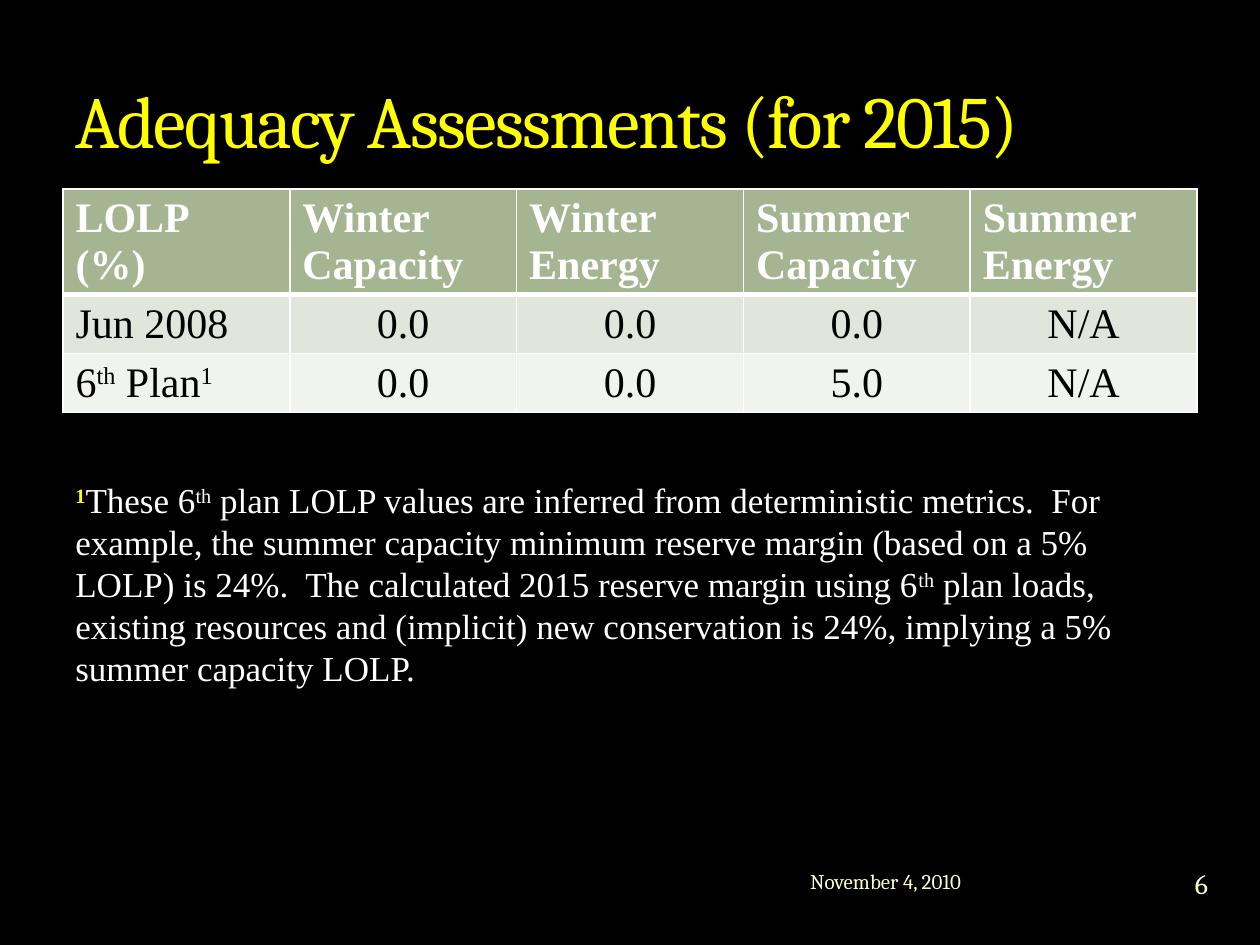
import pptx
import pptx.util
import pptx.dml.color
import pptx.enum.text
import pptx.oxml
import pptx.oxml.ns

Cm = pptx.util.Cm
Pt = pptx.util.Pt
RGB = pptx.dml.color.RGBColor
Align = pptx.enum.text.PP_ALIGN
Anchor = pptx.enum.text.MSO_ANCHOR

BLACK = RGB(0, 0, 0)
WHITE = RGB(255, 255, 255)
YELLOW = RGB(255, 255, 0)
CREAM = RGB(0xFE, 0xFA, 0xC9)
FILLS = [RGB(0xA5, 0xB5, 0x92), RGB(0xE1, 0xE5, 0xDC), RGB(0xF0, 0xF3, 0xEE)]
SERIF = "Times New Roman"
HEAD = "Cambria"

TITLE = "Adequacy Assessments (for 2015)"
DATE = "November 4, 2010"
PAGE = "6"
ROWS = [
    ["LOLP\n(%)", "Winter Capacity", "Winter Energy", "Summer Capacity", "Summer Energy"],
    ["Jun 2008", "0.0", "0.0", "0.0", "N/A"],
    ["6^th^ Plan^1", "0.0", "0.0", "5.0", "N/A"],
]
NOTE = (
    "^1^These 6^th^ plan LOLP values are inferred from deterministic metrics.  "
    "For example, the summer capacity minimum reserve margin (based on a 5% LOLP) "
    "is 24%.  The calculated 2015 reserve margin using 6^th^ plan loads, existing "
    "resources and (implicit) new conservation is 24%, implying a 5% summer "
    "capacity LOLP."
)
LEFT, WIDE = 1.27, 22.86
HIGHS = [2.11, 1.19, 1.19]


def write(frame, text, size, color, face=SERIF, bold=False, align=Align.LEFT):
    for i, line in enumerate(text.split("\n")):
        para = frame.add_paragraph() if i else frame.paragraphs[0]
        para.alignment = align
        font = para.font
        font.size, font.name, font.bold = Pt(size), face, bold
        font.color.rgb = color
        for j, part in enumerate(line.split("^")):
            if part:
                run = para.add_run()
                run.text = part
                if j % 2:
                    run._r.get_or_add_rPr().set("baseline", "30000")


def label(slide, box, text, size, color, face=HEAD, align=Align.LEFT, anchor=Anchor.MIDDLE):
    frame = slide.shapes.add_textbox(*map(Cm, box)).text_frame
    frame.word_wrap = True
    frame.vertical_anchor = anchor
    write(frame, text, size, color, face, align=align)
    return frame


def border(cell, sides):
    props = cell._tc.get_or_add_tcPr()
    for i, (side, width) in enumerate(sides):
        props.insert(i, pptx.oxml.parse_xml(
            f'<a:ln{side} {pptx.oxml.ns.nsdecls("a")} w="{Pt(width)}">'
            f'<a:solidFill><a:srgbClr val="{WHITE}"/></a:solidFill></a:ln{side}>'))


def grid(slide):
    cols = len(ROWS[0])
    table = slide.shapes.add_table(
        len(ROWS), cols, Cm(LEFT), Cm(3.81), Cm(WIDE), Cm(sum(HIGHS))).table
    for col in table.columns:
        col.width = Cm(WIDE / cols)
    for r, row in enumerate(ROWS):
        table.rows[r].height = Cm(HIGHS[r])
        for c, text in enumerate(row):
            cell = table.cell(r, c)
            cell.fill.solid()
            cell.fill.fore_color.rgb = FILLS[r]
            top = 3 if r == 1 else 1
            low = 3 if r == 0 else 1
            border(cell, [("L", 1), ("R", 1), ("T", top), ("B", low)])
            write(cell.text_frame, text, 24, BLACK if r else WHITE, bold=r == 0,
                  align=Align.CENTER if r and c else Align.LEFT)


def main():
    deck = pptx.Presentation()
    deck.slide_width, deck.slide_height = Cm(25.4), Cm(19.05)
    slide = deck.slides.add_slide(deck.slide_layouts[6])
    slide.background.fill.solid()
    slide.background.fill.fore_color.rgb = BLACK

    grid(slide)
    label(slide, (16.08, 17.22, 7.19, 1.07), DATE, 12, CREAM)
    page = label(slide, (23.37, 17.17, 1.7, 1.27), PAGE, 16, CREAM, align=Align.CENTER)
    page.margin_left = page.margin_right = page.margin_top = page.margin_bottom = 0

    title = label(slide, (LEFT, 1.07, WIDE, 2.34), TITLE, 42, YELLOW, anchor=Anchor.BOTTOM)
    props = title.paragraphs[0].runs[0]._r.get_or_add_rPr()
    props.set("spc", "-100")
    props.insert(0, pptx.oxml.parse_xml(
        f'<a:ln {pptx.oxml.ns.nsdecls("a")} w="{Pt(0.25)}"><a:solidFill>'
        '<a:srgbClr val="3C4422"><a:alpha val="25000"/></a:srgbClr>'
        '</a:solidFill></a:ln>'))

    note = label(slide, (LEFT, 9.53, WIDE, 4.52), NOTE, 20, WHITE, SERIF, anchor=Anchor.TOP)
    mark = note.paragraphs[0].runs[0].font
    mark.bold = True
    mark.color.rgb = YELLOW
    deck.save("out.pptx")


if __name__ == "__main__":
    main()
